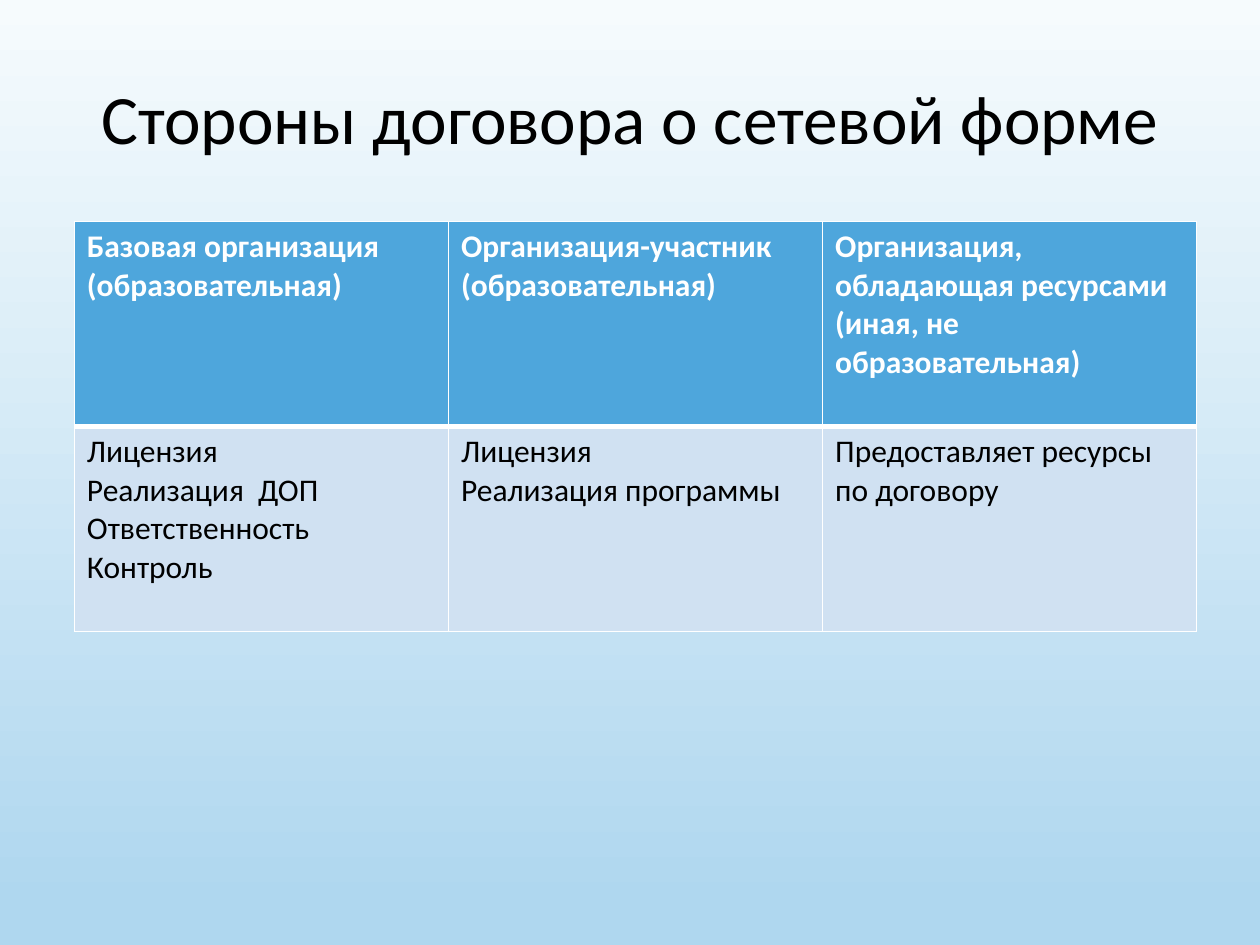
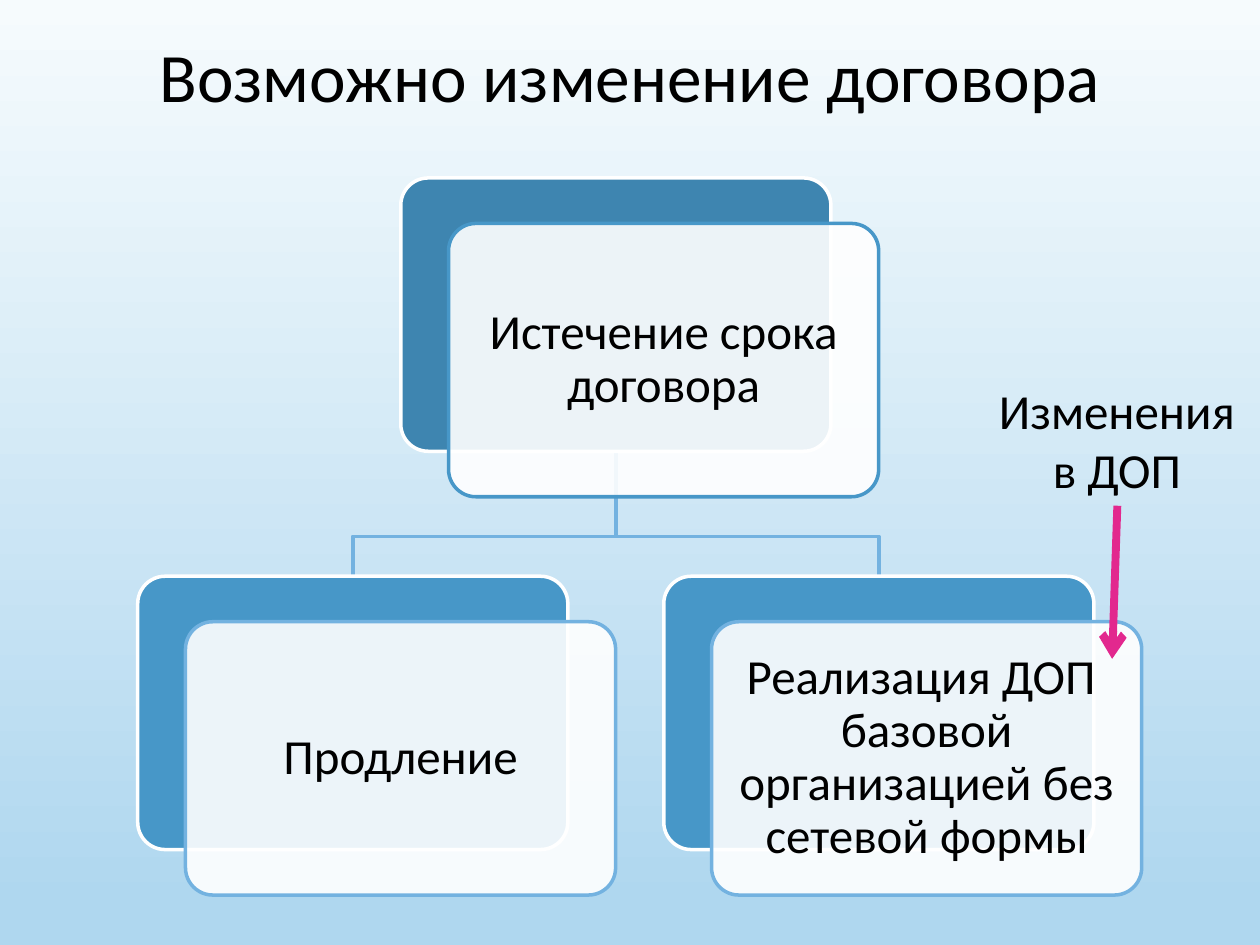
import pptx
import pptx.util
import pptx.dml.color
import pptx.enum.dml
import pptx.enum.shapes
import pptx.enum.text
import pptx.oxml
import pptx.oxml.ns
from lxml import etree

Pt = pptx.util.Pt
qn = pptx.oxml.ns.qn
ALIGN = pptx.enum.text.PP_ALIGN
ANCHOR = pptx.enum.text.MSO_ANCHOR

FONT = "Calibri"
BLACK, WHITE = "000000", "FFFFFF"
BG_TOP, BG_BOTTOM = "F6FBFD", "AFD7EF"
HEADER, BODY = "4EA6DC", "D0E1F2"
DARK, BLUE, LIGHT, PINK = "3E85B0", "4797C8", "73B2E0", "E2288E"

CARD_W, CARD_H = 245.8, 156.2
CARD_DX, CARD_DY = 27.3, 26


def rgb(color):
    return pptx.dml.color.RGBColor.from_string(color)


def set_background(master):
    fill = master.background.fill
    fill.gradient()
    fill.gradient_angle = 270
    for stop, color, position in zip(fill.gradient_stops, (BG_TOP, BG_BOTTOM), (0, 0.96)):
        stop.color.rgb = rgb(color)
        stop.position = position


def write(tf, text, size, color=BLACK, bold=False, align=ALIGN.CENTER, spacing=None):
    tf.word_wrap = True
    for i, line in enumerate(text.split("\n")):
        p = tf.paragraphs[0] if i == 0 else tf.add_paragraph()
        p.alignment = align
        if spacing:
            p.line_spacing = spacing
        r = p.add_run()
        r.text = line
        r.font.name = FONT
        r.font.size = Pt(size)
        r.font.bold = bold
        r.font.color.rgb = rgb(color)


def add_titled_slide(prs, text, top=3.6, bottom=3.6):
    s = prs.slides.add_slide(prs.slide_layouts[5])
    sp = s.shapes.title
    sp.left, sp.top, sp.width, sp.height = Pt(36), Pt(21.6), Pt(648), Pt(90)
    tf = sp.text_frame
    tf.auto_size = pptx.enum.text.MSO_AUTO_SIZE.NONE
    tf.vertical_anchor = ANCHOR.MIDDLE
    tf.margin_top, tf.margin_bottom = Pt(top), Pt(bottom)
    write(tf, text, 39.6)
    return s


def set_borders(cell, bottom=1):
    tcPr = cell._tc.get_or_add_tcPr()
    for i, (side, width) in enumerate((("L", 1), ("R", 1), ("T", 1), ("B", bottom))):
        ln = etree.Element(qn(f"a:ln{side}"), w=str(Pt(width)))
        fill = etree.SubElement(ln, qn("a:solidFill"))
        etree.SubElement(fill, qn("a:srgbClr"), val=WHITE)
        tcPr.insert(i, ln)


def add_table(s, rows, x, y, col_w, row_h):
    n = len(rows[0])
    table = s.shapes.add_table(len(rows), n, Pt(x), Pt(y),
                               Pt(col_w * n), Pt(row_h * len(rows))).table
    for i, row in enumerate(rows):
        head = i == 0
        for j, text in enumerate(row):
            cell = table.cell(i, j)
            cell.fill.solid()
            cell.fill.fore_color.rgb = rgb(HEADER if head else BODY)
            set_borders(cell, bottom=3 if head else 1)
            write(cell.text_frame, text, 18, color=WHITE if head else BLACK,
                  bold=head, align=ALIGN.LEFT)


def add_round_rect(s, x, y, fill, line, alpha=None):
    sp = s.shapes.add_shape(pptx.enum.shapes.MSO_SHAPE.ROUNDED_RECTANGLE,
                            Pt(x), Pt(y), Pt(CARD_W), Pt(CARD_H))
    sp.adjustments[0] = 0.1
    sp.shadow.inherit = False
    sp.fill.solid()
    sp.fill.fore_color.rgb = rgb(fill)
    sp.line.color.rgb = rgb(line)
    sp.line.width = Pt(2)
    if alpha:
        clr = sp._element.spPr.find(qn("a:solidFill")).find(qn("a:srgbClr"))
        etree.SubElement(clr, qn("a:alpha"), val=str(alpha * 1000))
    return sp


def add_card(s, text, x, y, back, edge):
    add_round_rect(s, x, y, back, WHITE)
    sp = add_round_rect(s, x + CARD_DX, y + CARD_DY, WHITE, edge, alpha=90)
    tf = sp.text_frame
    tf.vertical_anchor = ANCHOR.MIDDLE
    tf.margin_left = tf.margin_right = tf.margin_top = tf.margin_bottom = Pt(8.4)
    write(tf, text, 28, spacing=0.9)


def add_branch(s, x1, y1, x2, y2, bend):
    fb = s.shapes.build_freeform(Pt(x1), Pt(y1))
    fb.add_line_segments([(Pt(x), Pt(y)) for x, y in ((x1, bend), (x2, bend), (x2, y2))],
                         close=False)
    sp = fb.convert_to_shape()
    sp.shadow.inherit = False
    sp.fill.background()
    sp.line.color.rgb = rgb(LIGHT)
    sp.line.width = Pt(2)


def add_label(s, text, x, y, w, h):
    tf = s.shapes.add_textbox(Pt(x), Pt(y), Pt(w), Pt(h)).text_frame
    write(tf, text, 28)


def add_arrow(s, x1, y1, x2, y2):
    cxn = s.shapes.add_connector(pptx.enum.shapes.MSO_CONNECTOR.STRAIGHT,
                                 Pt(x1), Pt(y1), Pt(x2), Pt(y2))
    cxn.line.color.rgb = rgb(PINK)
    cxn.line.width = Pt(4.5)
    spPr = cxn._element.spPr
    etree.SubElement(spPr.find(qn("a:ln")), qn("a:tailEnd"), type="arrow")
    etree.SubElement(spPr, qn("a:effectLst"))


def build_parties(prs):
    s = add_titled_slide(prs, "Стороны договора о сетевой форме")
    rows = [
        ("Базовая организация (образовательная)",
         "Организация-участник (образовательная)",
         "Организация, обладающая ресурсами (иная, не образовательная)"),
        ("Лицензия\nРеализация  ДОП\nОтветственность\nКонтроль",
         "Лицензия\nРеализация программы",
         "Предоставляет ресурсы по договору"),
    ]
    add_table(s, rows, 42.5, 126.5, 213.8, 117.2)


def build_changes(prs):
    s = add_titled_slide(prs, "Возможно изменение договора", top=0, bottom=48)
    root_x, root_y, child_y, step = 229, 101.7, 329.3, 150.3
    center = root_x + CARD_W / 2
    children = [(root_x + step, "Реализация ДОП  базовой организацией без сетевой формы"),
                (root_x - step, "Продление")]
    for x, _ in children:
        add_branch(s, center, root_y + CARD_H, x + CARD_W / 2, child_y, 306.5)
    add_card(s, "Истечение срока договора", root_x, root_y, DARK, BLUE)
    for x, text in reversed(children):
        add_card(s, text, x, child_y, BLUE, LIGHT)
    add_label(s, "Изменения в ДОП", 556.5, 214, 163.5, 75)
    add_arrow(s, 638.5, 289, 635.5, 376.5)


def main():
    prs = pptx.Presentation()
    prs.slide_width, prs.slide_height = Pt(720), Pt(540)
    set_background(prs.slide_master)
    build_parties(prs)
    build_changes(prs)
    prs.save("out.pptx")


if __name__ == "__main__":
    main()
